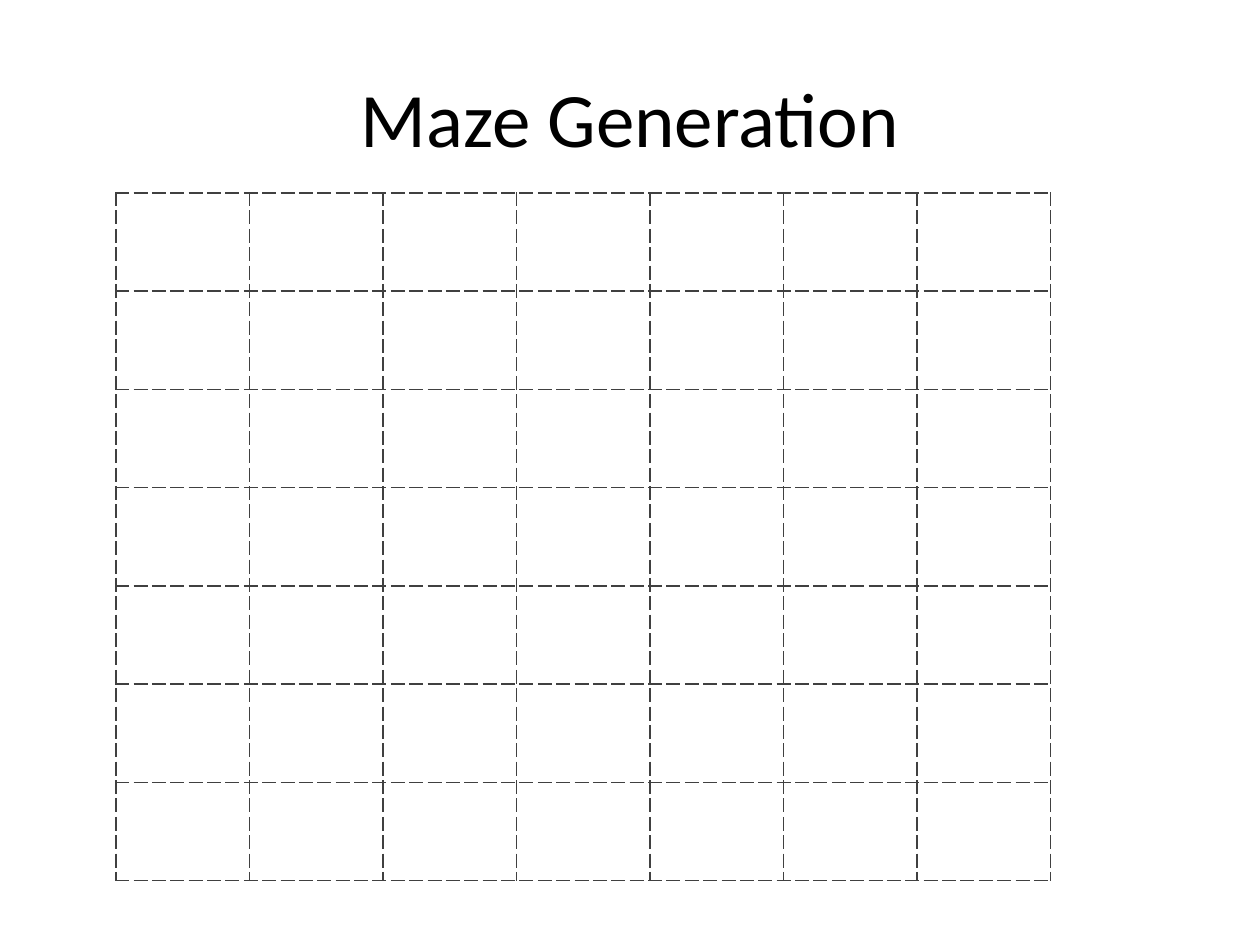
"""Build the Maze Generation slide: a title above a dashed square grid."""
import pptx
import pptx.dml.color
import pptx.enum.text
import pptx.oxml
import pptx.oxml.ns
import pptx.util

TITLE = "Maze Generation"
TITLE_BOX = {"left": 0.5, "top": 0.3, "width": 9, "height": 1.25}
TITLE_FONT = {"name": "Calibri", "size": pptx.util.Pt(44), "bold": False}
TITLE_COLOR = "000000"
MAZE = {"columns": 7, "rows": 7, "left": 0.92, "top": 1.53, "column": 1.06, "row": 0.78}
BORDER = {"color": "404040", "width": 1, "dash": "sysDash"}


def rgb(value):
    """Return a colour from a hex string."""
    return pptx.dml.color.RGBColor.from_string(value)


def set_attributes(target, values):
    """Set each named value on the target."""
    for name, value in values.items():
        setattr(target, name, value)


def add_title(slide):
    """Place and format the title placeholder."""
    title = slide.shapes.title
    set_attributes(title, {name: pptx.util.Inches(value) for name, value in TITLE_BOX.items()})
    title.text_frame.text = TITLE
    title.text_frame.vertical_anchor = pptx.enum.text.MSO_ANCHOR.MIDDLE
    paragraph = title.text_frame.paragraphs[0]
    paragraph.alignment = pptx.enum.text.PP_ALIGN.CENTER
    font = paragraph.runs[0].font
    set_attributes(font, TITLE_FONT)
    font.color.rgb = rgb(TITLE_COLOR)


def add_borders(cell):
    """Draw a dashed line on all four sides of a cell."""
    properties = cell._tc.get_or_add_tcPr()
    for side in ("lnL", "lnR", "lnT", "lnB"):
        properties.append(pptx.oxml.parse_xml(
            f'<a:{side} {pptx.oxml.ns.nsdecls("a")} w="{pptx.util.Pt(BORDER["width"])}">'
            f'<a:solidFill><a:srgbClr val="{BORDER["color"]}"/></a:solidFill>'
            f'<a:prstDash val="{BORDER["dash"]}"/></a:{side}>'))


def add_maze(slide):
    """Add the maze grid as a table of equal empty cells."""
    columns, rows = MAZE["columns"], MAZE["rows"]
    box = (MAZE["left"], MAZE["top"], columns * MAZE["column"], rows * MAZE["row"])
    table = slide.shapes.add_table(rows, columns, *map(pptx.util.Inches, box)).table
    set_attributes(table, {"first_row": False, "horz_banding": False})
    for cell in table.iter_cells():
        add_borders(cell)
        cell.fill.background()


def main():
    """Create and save the presentation."""
    presentation = pptx.Presentation()
    presentation.slide_width = pptx.util.Inches(10)
    presentation.slide_height = pptx.util.Inches(7.5)
    slide = presentation.slides.add_slide(presentation.slide_layouts[5])
    add_title(slide)
    add_maze(slide)
    presentation.save("out.pptx")


if __name__ == "__main__":
    main()
